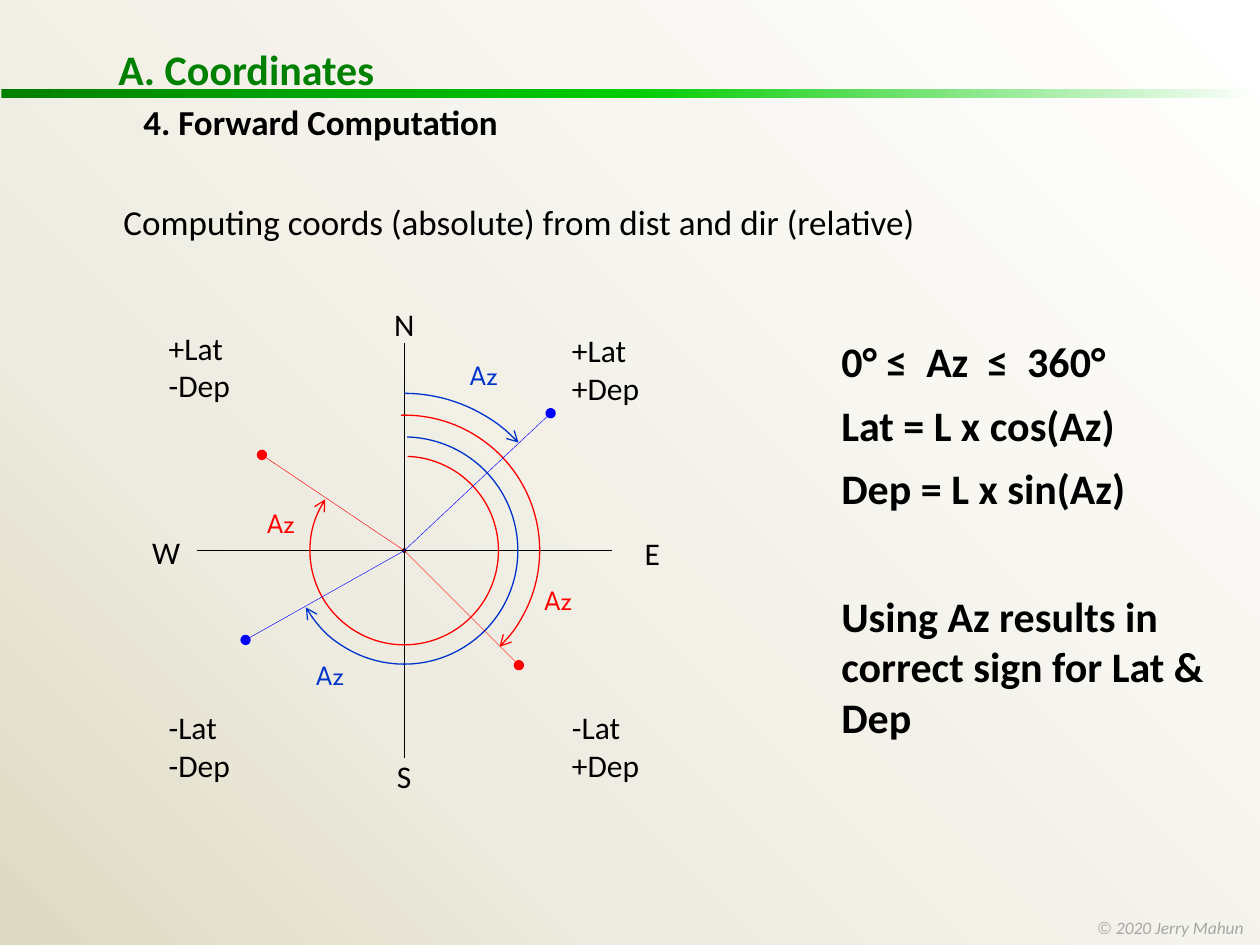
from dataclasses import dataclass

from lxml.etree import SubElement
from pptx import Presentation
from pptx.dml.color import RGBColor
from pptx.enum.shapes import MSO_CONNECTOR, MSO_SHAPE
from pptx.enum.text import MSO_ANCHOR, MSO_AUTO_SIZE, PP_ALIGN
from pptx.oxml.ns import qn
from pptx.util import Cm, Pt


@dataclass(frozen=True)
class Theme:
    font: str = "Calibri"
    angle_font: str = "League Spartan"
    green: str = "008000"
    black: str = "000000"
    grey: str = "A6A6A6"
    blue_ray: str = "0000FF"
    blue_arc: str = "0033CC"
    red: str = "FF0000"
    background: tuple = ((0, "FFFFFF"), (70, "EEECE1"), (100, "DDD9C3"))
    rule: tuple = ((0, "008000"), (50, "00CC00"), (100, "FFFFFF"))
    heading: int = 24
    body: int = 20
    compass: int = 18
    angle: int = 16
    credit: int = 10
    hairline: float = 0.25
    arc_line: float = 0.75


THEME = Theme()
CENTRE_X, CENTRE_Y = 8.15, 11.1
AXIS = 4.18  # half length of each axis

# Ray tip, arc radius, arc start and end in degrees, label corner, colours;
# lengths in cm, points relative to the compass centre
AZIMUTHS = [
    ((-2.87, -1.93), 1.9, 272.07, 212.98, (-2.77, -0.91), THEME.red, THEME.red),
    ((-3.2, 1.8), 2.29, 271.46, 149.98, (-1.78, 2.16), THEME.blue_ray, THEME.blue_arc),
    ((2.31, 2.31), 2.73, 268.72, 45.3, (2.82, 0.64), THEME.red, THEME.red),
    ((2.95, -2.77), 3.17, 270, 316.65, (1.32, -3.89), THEME.blue_ray, THEME.blue_arc),
]
# Letter, middle and top relative to the compass centre
COMPASS = [("N", 0, -4.95), ("E", 5, -0.33), ("S", 0, 4.17), ("W", -4.8, -0.36)]
QUADRANTS = [
    (11.28, 6.55, "+Lat", "+Dep"),
    (11.28, 14.15, "-Lat", "+Dep"),
    (3.15, 6.5, "+Lat", "-Dep"),
    (3.15, 14.15, "-Lat", "-Dep"),
]


def set_gradient(fill, owner, stops, angle):
    """Fill with the given stops; owner is the element that holds the fill."""
    fill.gradient()
    fill.gradient_angle = angle
    stop_list = next(owner.iter(qn("a:gsLst")))
    for old_stop in list(stop_list):
        stop_list.remove(old_stop)
    for position, color in stops:
        stop = SubElement(stop_list, qn("a:gs"), pos=str(position * 1000))
        SubElement(stop, qn("a:srgbClr"), val=color)


def style_font(font, size, color, bold=False, name=THEME.font):
    font.name = name
    font.size = Pt(size)
    font.bold = bold
    font.color.rgb = RGBColor.from_string(color)


def write(frame, lines, size, color=THEME.black, bold=False, name=THEME.font,
          align=PP_ALIGN.LEFT):
    frame.word_wrap = True
    frame.auto_size = MSO_AUTO_SIZE.NONE
    frame.vertical_anchor = MSO_ANCHOR.TOP
    for index, line in enumerate(lines):
        paragraph = frame.paragraphs[0] if index == 0 else frame.add_paragraph()
        paragraph.text = line
        paragraph.alignment = align
        style_font(paragraph.font, size, color, bold, name)


def add_text(slide, left, top, width, height, lines, size, inset=True, **style):
    frame = slide.shapes.add_textbox(Cm(left), Cm(top), Cm(width), Cm(height)).text_frame
    if not inset:
        frame.margin_left = frame.margin_right = 0
        frame.margin_top = frame.margin_bottom = 0
    write(frame, lines, size, **style)
    return frame


def style_line(shape, color, width, end=None):
    shape.line.color.rgb = RGBColor.from_string(color)
    shape.line.width = Pt(width)
    if end:
        SubElement(shape.line._get_or_add_ln(), qn("a:tailEnd"), type=end)


def add_line(slide, start, finish, color, end=None):
    """Draw a hairline between two points relative to the compass centre."""
    (x1, y1), (x2, y2) = start, finish
    line = slide.shapes.add_connector(
        MSO_CONNECTOR.STRAIGHT,
        Cm(CENTRE_X + x1), Cm(CENTRE_Y + y1), Cm(CENTRE_X + x2), Cm(CENTRE_Y + y2))
    style_line(line, color, THEME.hairline, end)
    SubElement(line.element.spPr, qn("a:effectLst"))


def add_round(slide, kind, radius):
    """Add a round shape about the compass centre."""
    shape = slide.shapes.add_shape(
        kind, Cm(CENTRE_X - radius), Cm(CENTRE_Y - radius), Cm(2 * radius), Cm(2 * radius))
    shape.shadow.inherit = False
    return shape


def add_arc(slide, radius, start, finish, color):
    arc = add_round(slide, MSO_SHAPE.ARC, radius)
    # One adjustment unit is 100000/60000 of a degree
    arc.adjustments[0] = start * 0.6
    arc.adjustments[1] = finish * 0.6
    arc.fill.background()
    style_line(arc, color, THEME.arc_line, "arrow")


def add_headings(slide):
    rule = slide.shapes.add_shape(MSO_SHAPE.RECTANGLE, Cm(0.03), Cm(1.8), Cm(25.4), Cm(0.18))
    rule.shadow.inherit = False
    set_gradient(rule.fill, rule.element, THEME.rule, 0)
    rule.line.fill.background()

    title = slide.shapes.title
    title.left, title.top, title.width, title.height = Cm(2.13), Cm(0.74), Cm(12.2), Cm(1.3)
    write(title.text_frame, ["A. Coordinates"], THEME.heading, color=THEME.green, bold=True)
    add_text(slide, 2.64, 1.91, 11.7, 1.2, ["4. Forward Computation"], THEME.body, bold=True)

    topic = add_text(slide, 2.24, 4.01, 22.68, 1.2,
                     ["Computing coords (absolute) from dist and dir (relative)"], THEME.body)
    topic.paragraphs[0].line_spacing = 0.9


def add_formulas(slide):
    formulas = add_text(
        slide, 16.71, 6.64, 8.69, 8.6,
        ["0° ≤  Az  ≤  360°", "Lat = L x cos(Az)", "Dep = L x sin(Az)",
         "Using Az results in correct sign for Lat & Dep"],
        THEME.heading, bold=True)
    for paragraph, gap in zip(formulas.paragraphs, (0, 7.5, 7.5, 44.3)):
        paragraph.space_before = Pt(gap)


def add_compass(slide):
    # Axes and centre point
    add_line(slide, (0, -AXIS), (0, AXIS), THEME.black)
    add_line(slide, (-AXIS, 0), (AXIS, 0), THEME.black)
    station = add_round(slide, MSO_SHAPE.OVAL, 0.04)
    station.fill.solid()
    station.fill.fore_color.rgb = RGBColor.from_string(THEME.black)
    style_line(station, THEME.black, THEME.hairline)

    # Compass letters
    for letter, x, y in COMPASS:
        add_text(slide, CENTRE_X + x - 0.5, CENTRE_Y + y, 1, 0.76, [letter],
                 THEME.compass, inset=False, align=PP_ALIGN.CENTER)

    # Directions with their azimuth arcs
    for tip, radius, start, finish, label, ray_color, arc_color in AZIMUTHS:
        add_line(slide, (0, 0), tip, ray_color, "oval")
        add_arc(slide, radius, start, finish, arc_color)
        add_text(slide, CENTRE_X + label[0], CENTRE_Y + label[1], 1, 0.69, ["Az"],
                 THEME.angle, inset=False, color=arc_color, name=THEME.angle_font)

    # Signs in each quadrant
    for left, top, *signs in QUADRANTS:
        add_text(slide, left, top, 2.69, 1.8, signs, THEME.compass)


def add_credit(slide):
    credit = add_text(slide, 21.89, 18.36, 3.51, 0.69, ["© "], THEME.credit,
                      color=THEME.grey, name="Arial")
    credit.word_wrap = False
    author = credit.paragraphs[0].add_run()
    author.text = "2020 Jerry Mahun"
    author.font.name = THEME.font
    author.font.italic = True


def main():
    presentation = Presentation()
    presentation.slide_width, presentation.slide_height = Cm(25.4), Cm(19.05)
    slide = presentation.slides.add_slide(presentation.slide_layouts[5])
    set_gradient(slide.background.fill, slide.element, THEME.background, 225)
    add_headings(slide)
    add_formulas(slide)
    add_compass(slide)
    add_credit(slide)
    presentation.save("out.pptx")


if __name__ == "__main__":
    main()
